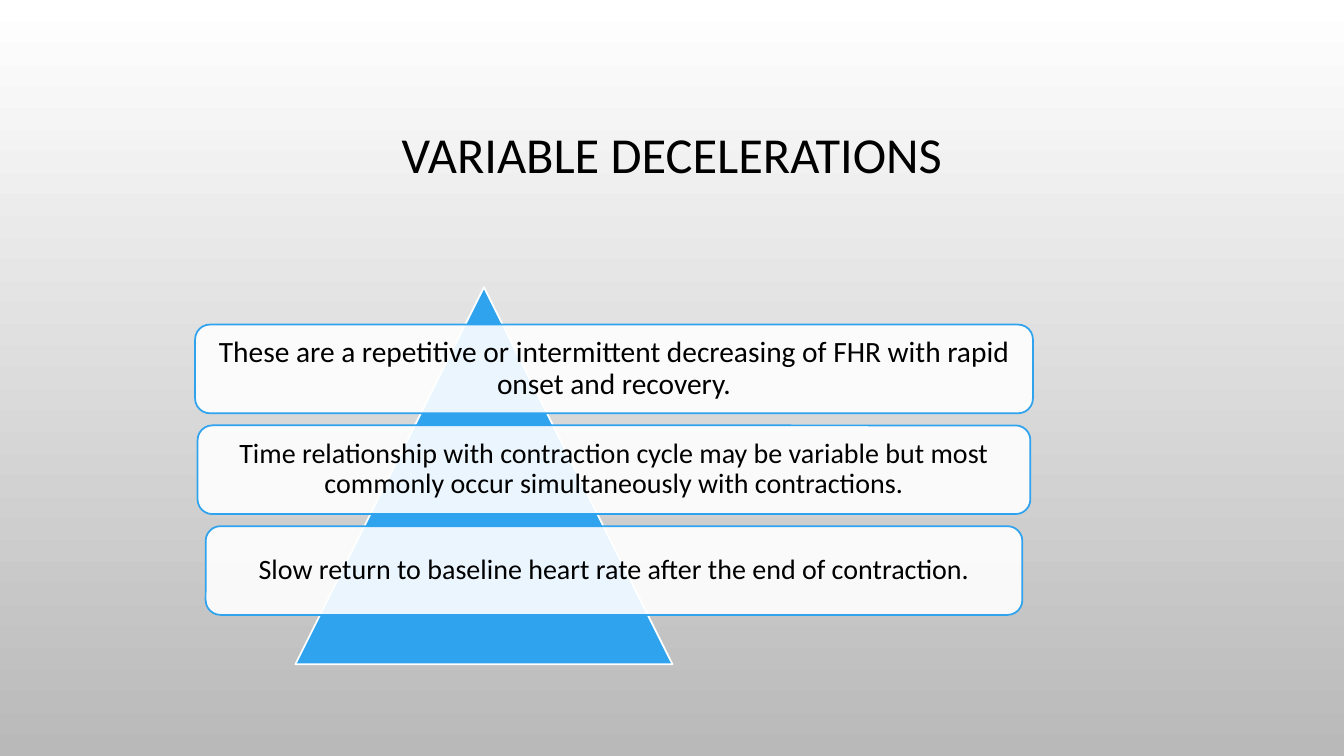
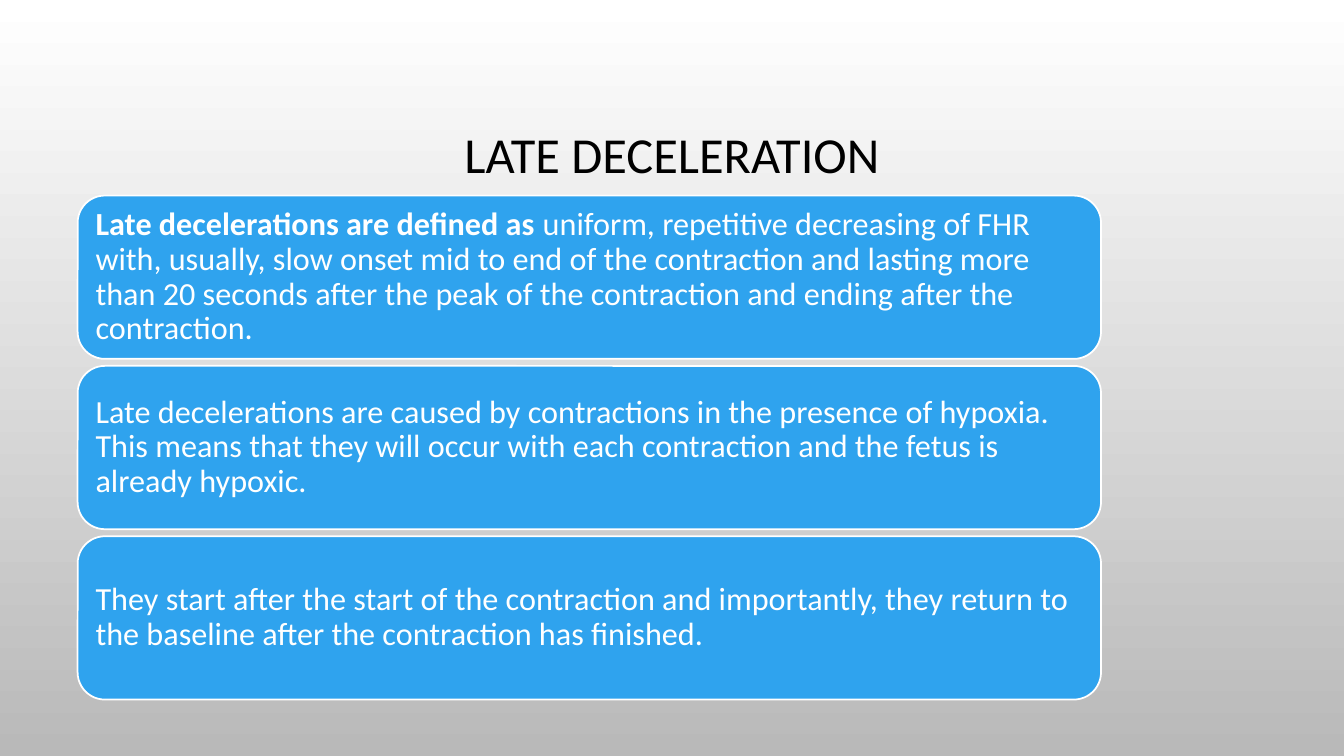
from lxml import etree
from pptx import Presentation
from pptx.dml.color import RGBColor
from pptx.enum.shapes import MSO_SHAPE
from pptx.enum.text import MSO_ANCHOR, PP_ALIGN
from pptx.oxml.ns import qn
from pptx.util import Inches, Pt

COLORS = {"blue": "2FA3EE", "white": "FFFFFF", "black": "000000", "gray": "B9B9B9"}


def write(shape, *runs, size, color="black", align=PP_ALIGN.CENTER, margin=0.1, bold_first=False):
    """Fill a shape with one paragraph made of the given runs."""
    frame = shape.text_frame
    frame.word_wrap = True
    frame.vertical_anchor = MSO_ANCHOR.MIDDLE
    frame.margin_left = frame.margin_right = Inches(margin)
    frame.margin_top = frame.margin_bottom = Inches(margin)
    paragraph = frame.paragraphs[0]
    paragraph.alignment = align
    paragraph.line_spacing = 0.9
    for index, text in enumerate(runs):
        run = paragraph.add_run()
        run.text = text
        run.font.name = "Calibri"
        run.font.size = Pt(size)
        run.font.bold = bold_first and index == 0
        run.font.color.rgb = RGBColor.from_string(COLORS[color])


def add_panel(slide, preset, left, top, width, height, fill, line, opacity=100):
    """Add a filled, outlined shape without a shadow."""
    panel = slide.shapes.add_shape(preset, Inches(left), Inches(top), Inches(width), Inches(height))
    panel.shadow.inherit = False
    panel.fill.solid()
    panel.fill.fore_color.rgb = RGBColor.from_string(COLORS[fill])
    if opacity < 100:
        fill_color = panel._element.spPr.find(qn("a:solidFill")).find(qn("a:srgbClr"))
        etree.SubElement(fill_color, qn("a:alpha"), val=str(opacity * 1000))
    panel.line.color.rgb = RGBColor.from_string(COLORS[line])
    panel.line.width = Pt(1.25)
    return panel


prs = Presentation()
prs.slide_width, prs.slide_height = Inches(13.33), Inches(7.5)

# Shared background: white fading down to gray
backdrop = prs.slide_master.background.fill
backdrop.gradient()
backdrop.gradient_angle = 270
for stop, name in zip(backdrop.gradient_stops, ("white", "gray")):
    stop.color.rgb = RGBColor.from_string(COLORS[name])

# Both slides with their titles
slides = []
for heading in ("VARIABLE DECELERATIONS", "LATE DECELERATION"):
    slide = prs.slides.add_slide(prs.slide_layouts[5])
    title = slide.shapes.title
    title.left, title.top = Inches(1), Inches(0.68)
    title.width, title.height = Inches(11.33), Inches(1.75)
    write(title, heading, size=36)
    slides.append(slide)
variable_slide, late_slide = slides

# Variable decelerations: pyramid behind three centred bars
add_panel(variable_slide, MSO_SHAPE.ISOSCELES_TRIANGLE, 2.93, 2.85, 3.74, 3.74, "blue", "white")
BARS_CENTER = 6.09
features = [
    (8.31, 21, 0.09, "These are a repetitive or intermittent decreasing of FHR with rapid onset and recovery."),
    (8.26, 20, 0.08, "Time relationship with contraction cycle may be variable but most commonly occur "
                     "simultaneously with contractions."),
    (8.1, 20, 0.08, "Slow return to baseline heart rate after the end of contraction."),
]
for row, (width, size, margin, text) in enumerate(features):
    bar = add_panel(variable_slide, MSO_SHAPE.ROUNDED_RECTANGLE, BARS_CENTER - width / 2,
                    3.22 + row, width, 0.88, "white", "blue", opacity=90)
    write(bar, text, size=size, margin=margin)

# Late deceleration: three stacked statements
statements = [
    ("Late decelerations are defined as ",
     "uniform, repetitive decreasing of FHR with, usually, slow onset mid to end of the contraction "
     "and lasting more than 20 seconds after the peak of the contraction and ending after the contraction."),
    ("Late decelerations are caused by contractions in the presence of hypoxia. This means that they "
     "will occur with each contraction and the fetus is already hypoxic.",),
    ("They start after the start of the contraction and importantly, they return to the baseline after "
     "the contraction has finished.",),
]
for row, runs in enumerate(statements):
    block = add_panel(late_slide, MSO_SHAPE.ROUNDED_RECTANGLE, 0.77, 1.94 + 1.69 * row,
                      10.15, 1.62, "blue", "white")
    write(block, *runs, size=23, color="white", align=PP_ALIGN.LEFT, bold_first=len(runs) > 1)

prs.save("out.pptx")
